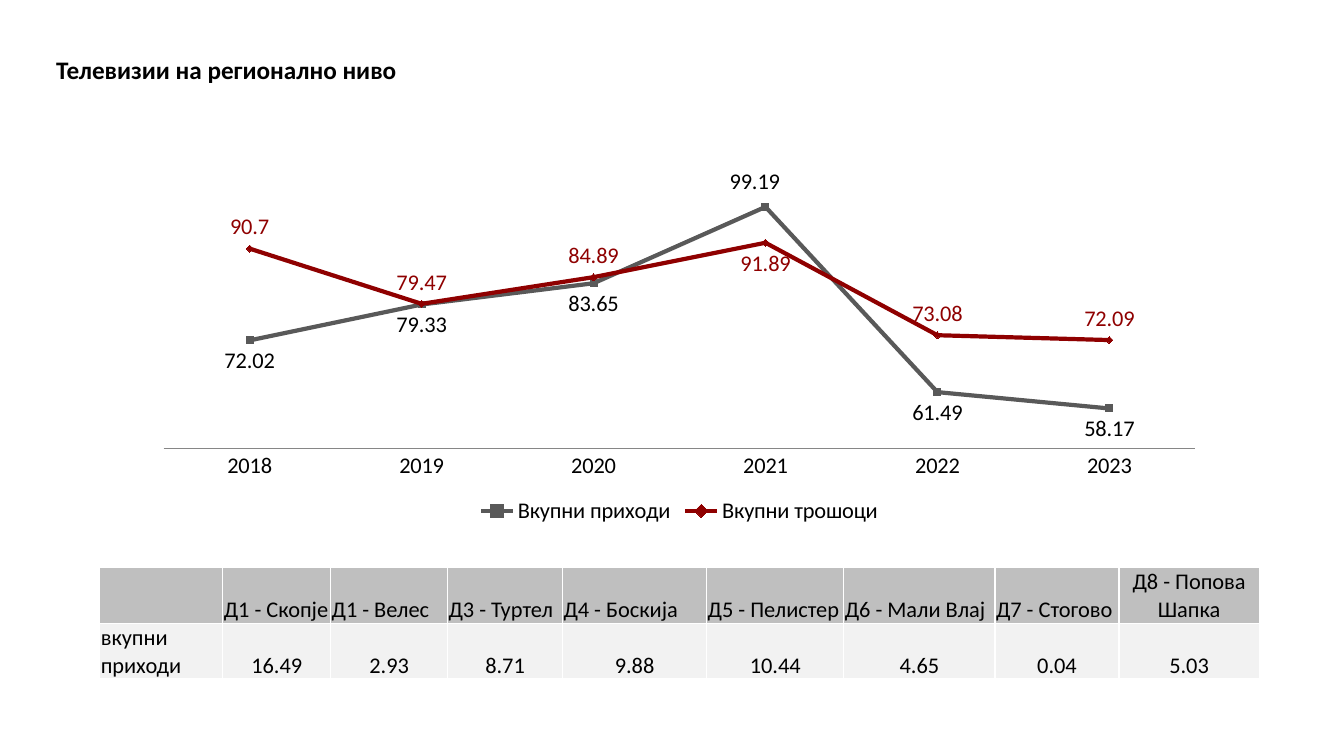
from lxml.etree import SubElement
from pptx import Presentation
from pptx.chart.data import CategoryChartData
from pptx.dml.color import RGBColor
from pptx.enum.chart import (XL_CHART_TYPE, XL_LABEL_POSITION, XL_LEGEND_POSITION,
                             XL_MARKER_STYLE, XL_TICK_MARK)
from pptx.enum.text import MSO_ANCHOR, PP_ALIGN
from pptx.oxml import parse_xml
from pptx.oxml.ns import nsdecls, qn
from pptx.util import Pt

EMU_PER_PX = 9144  # 100 px to the inch
FONT = "Calibri"
BLACK, GREY, RED = "000000", "595959", "8F0000"
ABOVE, BELOW = XL_LABEL_POSITION.ABOVE, XL_LABEL_POSITION.BELOW

YEARS = ["2018", "2019", "2020", "2021", "2022", "2023"]
PEAK = YEARS.index("2021")
# name, values, line colour, label colour, marker, label side, label side at the peak
SERIES = [
    ("Вкупни приходи", [72.02, 79.33, 83.65, 99.19, 61.49, 58.17],
     GREY, BLACK, XL_MARKER_STYLE.SQUARE, BELOW, ABOVE),
    ("Вкупни трошоци", [90.7, 79.47, 84.89, 91.89, 73.08, 72.09],
     RED, RED, XL_MARKER_STYLE.DIAMOND, ABOVE, BELOW),
]
COLUMN_WIDTHS = [122, 107, 116, 114, 143, 136, 150, 123, 139]
ROWS = [
    ("BFBFBF", ["", "Д1 - Скопје", "Д1 - Велес", "Д3 - Туртел", "Д4 - Боскија",
                "Д5 - Пелистер", "Д6 - Мали Влај", "Д7 - Стогово", "Д8 - Попова Шапка"]),
    ("F2F2F2", ["вкупни приходи", "16.49", "2.93", "8.71", "9.88",
                "10.44", "4.65", "0.04", "5.03"]),
]


def px(n):
    return int(n * EMU_PER_PX)


def color(value):
    return RGBColor.from_string(value)


def set_font(font, size, value=BLACK, bold=False):
    font.name, font.size, font.bold = FONT, Pt(size), bold
    font.color.rgb = color(value)


def add_title(s, x, y, w, h, text):
    sp = s.shapes.title
    sp.left, sp.top, sp.width, sp.height = px(x), px(y), px(w), px(h)
    tf = sp.text_frame
    tf.word_wrap = True
    tf.vertical_anchor = MSO_ANCHOR.MIDDLE
    p = tf.paragraphs[0]
    p.alignment = PP_ALIGN.CENTER
    r = p.add_run()
    r.text = text
    set_font(r.font, 18, bold=True)


def manual_layout(**parts):
    items = "".join(f'<c:{tag} val="{val}"/>' for tag, val in parts.items())
    return parse_xml(f'<c:layout {nsdecls("c")}><c:manualLayout>{items}'
                     '</c:manualLayout></c:layout>')


def format_series(ser, line, text, marker, side, peak_side):
    ser.smooth = False
    ser.format.line.color.rgb = color(line)
    ser.format.line.width = Pt(3)
    ser.marker.style, ser.marker.size = marker, 5
    ser.marker.format.fill.solid()
    ser.marker.format.fill.fore_color.rgb = color(line)
    ser.marker.format.line.color.rgb = color(line)
    labels = ser.data_labels
    labels.show_value = True
    labels.position = side
    set_font(labels.font, 16, text)
    peak = ser.points[PEAK].data_label
    set_font(peak.font, 16, text)
    peak.position = peak_side


def add_line_chart(s, x, y, w, h):
    data = CategoryChartData()
    data.categories = YEARS
    for name, values, *_ in SERIES:
        data.add_series(name, values)
    chart = s.shapes.add_chart(XL_CHART_TYPE.LINE_MARKERS,
                               px(x), px(y), px(w), px(h), data).chart
    chart.has_title = False
    set_font(chart.font, 10)

    # Axes
    years, amounts = chart.category_axis, chart.value_axis
    years.major_tick_mark = XL_TICK_MARK.NONE
    years.format.line.color.rgb = color("868686")
    set_font(years.tick_labels.font, 16)
    amounts.minimum_scale, amounts.maximum_scale = 50, 110
    amounts.has_major_gridlines = False
    amounts.visible = False

    # Legend
    chart.has_legend = True
    chart.legend.position = XL_LEGEND_POSITION.BOTTOM
    chart.legend.include_in_layout = False
    set_font(chart.legend.font, 16)

    # Series and plot area
    plot = chart.plots[0]
    plot.vary_by_categories = False
    for ser, (_, _, *style) in zip(plot.series, SERIES):
        format_series(ser, *style)
    area = chart.element.find(".//" + qn("c:plotArea"))
    for old in area.findall(qn("c:layout")):
        area.remove(old)
    area.insert(0, manual_layout(layoutTarget="inner", xMode="edge", yMode="edge",
                                 x=0.02, y=0.02, w=0.96, h=0.77))

    # Nudge the highest label up and left
    label = area.find(".//" + qn("c:dLbl"))
    label.find(qn("c:idx")).addnext(manual_layout(x=-0.01, y=-0.01))


def format_cell(cell, fill, text, align):
    tc_pr = cell._tc.get_or_add_tcPr()
    for side in ("lnL", "lnR", "lnT", "lnB"):
        ln = SubElement(tc_pr, qn(f"a:{side}"), w=str(Pt(1)))
        SubElement(SubElement(ln, qn("a:solidFill")), qn("a:srgbClr"), val="FFFFFF")
    cell.fill.solid()
    cell.fill.fore_color.rgb = color(fill)
    cell.margin_left = cell.margin_right = cell.margin_top = px(1)
    cell.margin_bottom = 0
    cell.vertical_anchor = MSO_ANCHOR.BOTTOM
    p = cell.text_frame.paragraphs[0]
    p.alignment = align
    if text:
        r = p.add_run()
        r.text = text
        set_font(r.font, 16)


def add_income_table(s, x, y, w, h):
    table = s.shapes.add_table(len(ROWS), len(COLUMN_WIDTHS),
                               px(x), px(y), px(w), px(h)).table
    table.first_row = table.horz_banding = False
    for column, width in zip(table.columns, COLUMN_WIDTHS):
        column.width = px(width)
    last = len(COLUMN_WIDTHS) - 1
    for i, (fill, texts) in enumerate(ROWS):
        table.rows[i].height = px(h / len(ROWS))
        for j, text in enumerate(texts):
            centred = j == last or (i > 0 and j > 0)
            align = PP_ALIGN.CENTER if centred else PP_ALIGN.LEFT
            format_cell(table.cell(i, j), fill, text, align)


def main():
    prs = Presentation()
    prs.slide_width, prs.slide_height = px(1333), px(750)
    s = prs.slides.add_slide(prs.slide_layouts[5])
    add_title(s, 30, 48, 389, 41, "Телевизии на регионално ниво")
    add_line_chart(s, 141, 145, 1066, 380)
    add_income_table(s, 99, 563, sum(COLUMN_WIDTHS), 109)
    prs.save("out.pptx")


if __name__ == "__main__":
    main()
